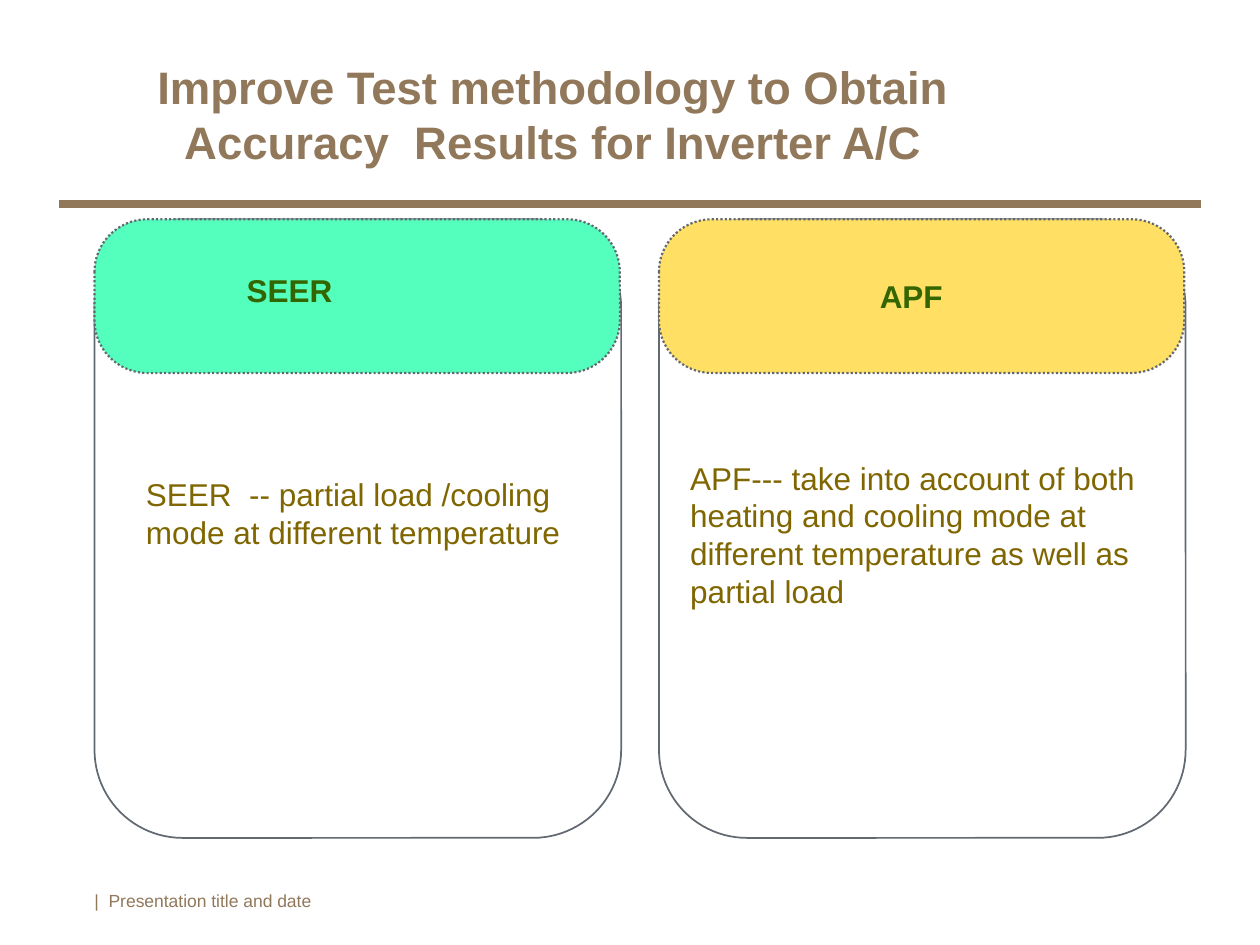
from lxml.etree import SubElement
from pptx import Presentation
from pptx.dml.color import RGBColor
from pptx.enum.dml import MSO_LINE
from pptx.enum.shapes import MSO_CONNECTOR, MSO_SHAPE
from pptx.enum.text import MSO_ANCHOR as Anchor, PP_ALIGN as Align
from pptx.oxml.ns import qn
from pptx.util import Inches, Pt

COLORS = {
    "brown": "91785B",
    "outline": "626971",
    "white": "FFFFFF",
    "mint": "54FEBD",
    "yellow": "FFE065",
    "heading": "336600",
    "body": "7F6600",
}
WIDTH, HEIGHT = 10, 7.5
MARGIN = 0.47
COLUMN_LEFT, COLUMN_PITCH = 0.75, 4.48
CARD_TOP, CARD_WIDTH, CARD_HEIGHT = 1.74, 4.18, 4.91
HEADER_WIDTH, HEADER_HEIGHT = 4.17, 1.22
INSETS = (0.1, 0.05, 0.1, 0.05)


def rgb(name):
    return RGBColor.from_string(COLORS[name])


def write(shape, text, size=18, color="body", bold=False, align=Align.LEFT,
          anchor=Anchor.TOP, insets=INSETS, wrap=True):
    frame = shape.text_frame
    frame.word_wrap = wrap
    frame.vertical_anchor = anchor
    (frame.margin_left, frame.margin_top,
     frame.margin_right, frame.margin_bottom) = map(Inches, insets)
    paragraph = frame.paragraphs[0]
    paragraph.alignment = align
    run = paragraph.add_run()
    run.text = text
    run.font.name = "Arial"
    run.font.size = Pt(size)
    run.font.bold = bold
    run.font.color.rgb = rgb(color)


def add_text(slide, box, text, **text_format):
    shape = slide.shapes.add_textbox(*map(Inches, box))
    write(shape, text, **text_format)


def add_rounded(slide, box, radius, fill, line_width, dash=None):
    shape = slide.shapes.add_shape(MSO_SHAPE.ROUNDED_RECTANGLE, *map(Inches, box))
    shape.adjustments[0] = radius
    shape.shadow.inherit = False
    shape.fill.solid()
    shape.fill.fore_color.rgb = rgb(fill)
    shape.line.color.rgb = rgb("outline")
    shape.line.width = Pt(line_width)
    if dash:
        shape.line.dash_style = dash
    return shape


def add_card(slide, column, header_fill):
    """Draw a card with its coloured header and return the header."""
    left = COLUMN_LEFT + column * COLUMN_PITCH
    add_rounded(slide, (left, CARD_TOP, CARD_WIDTH, CARD_HEIGHT), 0.167, "white", 1)
    return add_rounded(slide, (left, CARD_TOP, HEADER_WIDTH, HEADER_HEIGHT), 0.344,
                       header_fill, 1.25, MSO_LINE.ROUND_DOT)


def add_rule(slide, top):
    line = slide.shapes.add_connector(
        MSO_CONNECTOR.STRAIGHT, Inches(MARGIN), Inches(top),
        Inches(WIDTH - MARGIN), Inches(top))
    line.line.color.rgb = rgb("brown")
    line.line.width = Pt(5)
    SubElement(line._element.spPr, qn("a:effectLst"))


def main():
    presentation = Presentation()
    presentation.slide_width = Inches(WIDTH)
    presentation.slide_height = Inches(HEIGHT)
    slide = presentation.slides.add_slide(presentation.slide_layouts[6])

    add_rule(slide, 1.62)
    add_text(slide, (MARGIN, 0.44, 7.84, 0.93),
             "Improve Test methodology to Obtain Accuracy  Results for Inverter A/C",
             size=26, color="brown", bold=True, align=Align.CENTER,
             anchor=Anchor.MIDDLE, insets=(0, 0, 0, 0))
    add_text(slide, (COLUMN_LEFT, 7.06, 6.57, 0.3), "|  Presentation title and date",
             size=10, color="brown", insets=(0, 0, 0, 0))

    add_card(slide, 0, "mint")
    apf_header = add_card(slide, 1, "yellow")
    write(apf_header, "APF", color="heading", bold=True, anchor=Anchor.MIDDLE,
          insets=(1.63, 0.05, 0.1, 0.05))
    add_text(slide, (1.86, 2.1, 0.96, 0.4), "SEER", color="heading", bold=True,
             wrap=False)
    add_text(slide, (1.06, 3.72, 3.62, 0.71),
             "SEER  -- partial load /cooling mode at different temperature")
    add_text(slide, (5.38, 3.59, 3.86, 1.31),
             "APF--- take into account of both heating and cooling mode at "
             "different temperature as well as partial load")

    presentation.save("out.pptx")


if __name__ == "__main__":
    main()
